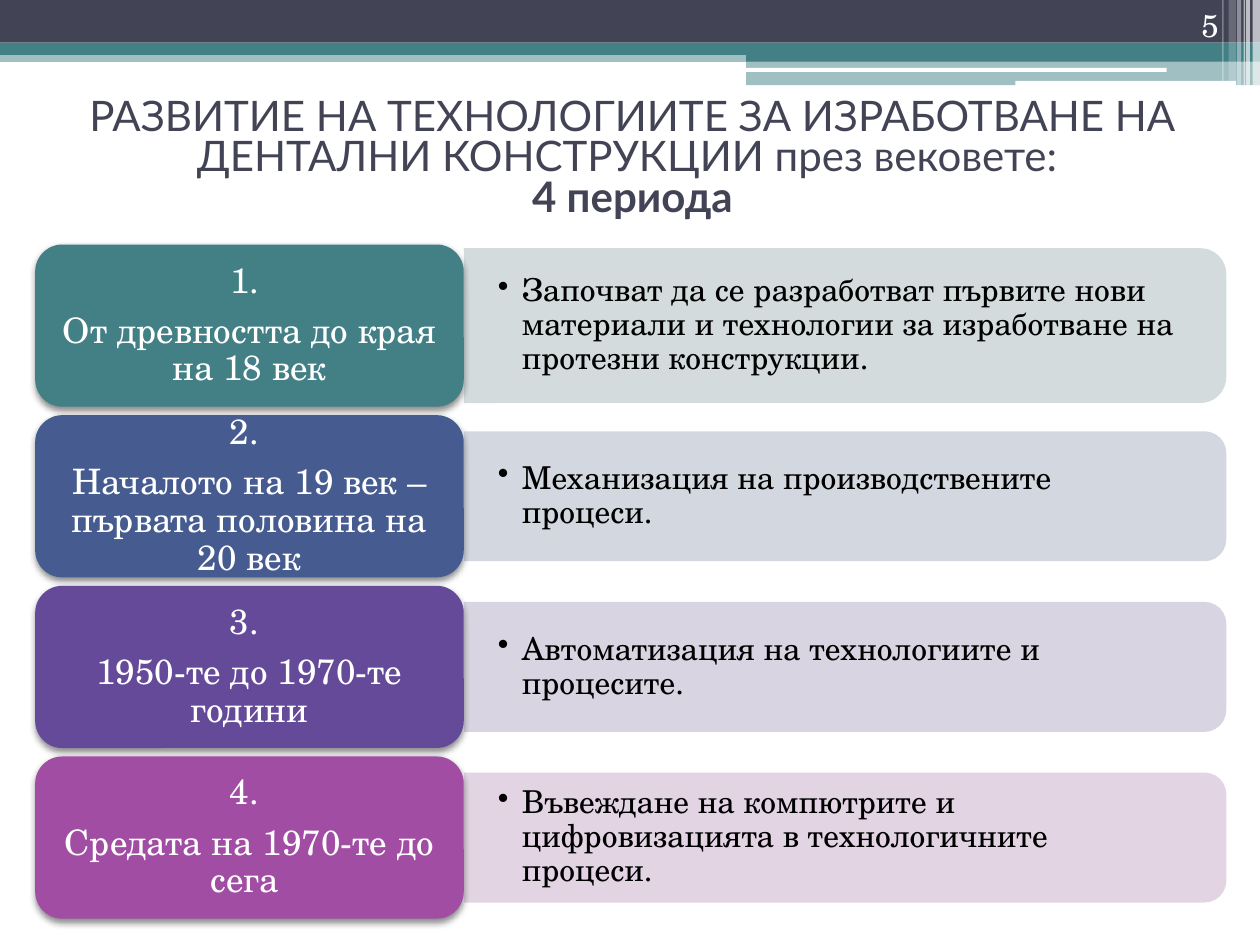
import pptx
import pptx.util
import pptx.dml.color
import pptx.enum.shapes
import pptx.enum.text
from pptx.oxml import parse_xml
from pptx.oxml.ns import nsdecls, qn
from lxml import etree

Cm, Pt = pptx.util.Cm, pptx.util.Pt
Kind = pptx.enum.shapes.MSO_SHAPE
Side = pptx.enum.text.PP_ALIGN
Hold = pptx.enum.text.MSO_ANCHOR

# Content
HEAD = [("РАЗВИТИЕ НА ТЕХНОЛОГИИТЕ ЗА ИЗРАБОТВАНЕ НА ДЕНТАЛНИ КОНСТРУКЦИИ през вековете: ", False),
        ("4 периода", True)]
PAGE = "5"
ERAS = [
    ("1. ", "От древността до края на 18 век",
     "Започват да се разработват първите нови материали и технологии за изработване на протезни конструкции."),
    ("2. ", "Началото на 19 век – първата половина на 20 век",
     "Механизация на производствените процеси."),
    ("3. ", "1950-те до 1970-те години",
     "Автоматизация на технологиите и процесите."),
    ("4. ", "Средата на 1970-те до сега ",
     "Въвеждане на компютрите и цифровизацията в технологичните процеси."),
]
TALL = [3.12, 2.62, 2.62, 2.62]  # panel heights, cm

HUES = {"dark": "424456", "teal": "438086", "white": "FFFFFF", "black": "000000",
        "era0": "438086", "era1": "465B90", "era2": "654A99", "era3": "A04DA3",
        "pale0": "CFD8D9", "pale1": "CFD3DC", "pale2": "D4D0DE", "pale3": "DFD0E0"}
SANS, SERIF = "Lato", "TeX Gyre Schola"

# Header bands: left, top, width, height (cm), colour, opacity %
BANDS = [
    (0, 1.02, 25.4, 0.23, "teal", 50),
    (0, 0, 25.4, 0.86, "dark", 100),
    (0, 0.86, 25.4, 0.25, "teal", 100),
    (15.04, 0.99, 10.36, 0.25, "teal", 100),
    (15.04, 1.22, 10.36, 0.5, "teal", 50),
]
PILLS = [(15.01, 1.37, 8.51, 0.08, "white", 100),
         (20.47, 1.63, 4.45, 0.1, "white", 100)]
# Thin stripes on the right: left, width, height (cm), opacity %
LINES = [(25.25, 0.15, 1.73, 65), (25.12, 0.08, 1.73, 65), (25.07, 0.03, 1.73, 60),
         (24.94, 0.08, 1.73, 40), (24.77, 0.15, 1.63, 20), (24.64, 0.03, 1.63, 30)]

deck = pptx.Presentation()
deck.slide_width, deck.slide_height = Cm(25.4), Cm(19.05)
slide = deck.slides.add_slide(deck.slide_layouts[6])


def tint(name):
    return pptx.dml.color.RGBColor.from_string(HUES[name])


def draw(kind, left, top, wide, high, hue, solid=100):
    part = slide.shapes.add_shape(kind, Cm(left), Cm(top), Cm(wide), Cm(high))
    part.shadow.inherit = False
    part.fill.solid()
    part.fill.fore_color.rgb = tint(hue)
    part.line.fill.background()
    if solid < 100:
        tone = part.fill._xPr.find(qn("a:solidFill"))[0]
        etree.SubElement(tone, qn("a:alpha")).set("val", str(solid * 1000))
    return part


def shade(part):
    props = part._element.spPr
    props.remove(props.find(qn("a:effectLst")))
    props.append(parse_xml(
        f'<a:effectLst {nsdecls("a")}><a:outerShdw blurRad="{Pt(4)}" dist="{Pt(2)}" '
        f'dir="5400000" rotWithShape="0"><a:srgbClr val="{HUES["black"]}">'
        '<a:alpha val="45000"/></a:srgbClr></a:outerShdw></a:effectLst>'))


def box(left, top, wide, high):
    return slide.shapes.add_textbox(Cm(left), Cm(top), Cm(wide), Cm(high))


def apply(item, form):
    for key, val in form.items():
        setattr(item, key, val)


def setup(part, hold, pad=(0.25, 0.13)):
    frame = part.text_frame
    apply(frame, {"word_wrap": True, "vertical_anchor": hold,
                  "margin_left": Cm(pad[0]), "margin_right": Cm(pad[0]),
                  "margin_top": Cm(pad[1]), "margin_bottom": Cm(pad[1])})
    return frame


def write(para, text, face, size, hue, bold=False):
    run = para.add_run()
    run.text = text
    apply(run.font, {"name": face, "size": Pt(size), "bold": bold})
    run.font.color.rgb = tint(hue)


# Header
for band in BANDS:
    draw(Kind.RECTANGLE, *band)
for pill in PILLS:
    draw(Kind.ROUNDED_RECTANGLE, *pill)
for left, wide, high, solid in LINES:
    draw(Kind.RECTANGLE, left, 0, wide, high, "white", solid)

# Title and page number
para = setup(box(0.28, 1.52, 24.64, 3.4), Hold.MIDDLE).paragraphs[0]
apply(para, {"alignment": Side.CENTER, "line_spacing": 0.8})
para._p.get_or_add_pPr().set("marL", str(Cm(0.3)))
for spot, (text, bold) in enumerate(HEAD):
    if spot:
        para.add_line_break()
    write(para, text, SANS, 24, "dark", bold)

para = setup(box(22.71, 0, 2.11, 1.02), Hold.BOTTOM).paragraphs[0]
para.alignment = Side.RIGHT
write(para, PAGE, SERIF, 18, "white")

# Periods: a pale panel with its bullet, and a label at its left
LEFT, TOP, WIDE, HIGH, STEP = 0.71, 4.93, 8.64, 3.27, 3.44
EDGE, SPAN = LEFT + WIDE, 15.37
for row, ((mark, name, note), tall) in enumerate(zip(ERAS, TALL)):
    top = TOP + row * STEP
    mid = top + HIGH / 2
    # The panel is turned a quarter, so its sides swap about its centre
    panel = draw(Kind.ROUND_2_SAME_RECTANGLE, EDGE + (SPAN - tall) / 2, mid - SPAN / 2,
                 tall, SPAN, f"pale{row}", 90)
    panel.rotation = 90

    high = tall - 0.28
    para = setup(box(EDGE, mid - high / 2, 15.22, high), Hold.MIDDLE, (0.69, 0.36)).paragraphs[0]
    apply(para, {"line_spacing": 0.9, "space_after": Pt(2.7)})
    props = para._p.get_or_add_pPr()
    props.set("marL", str(Cm(0.48)))
    props.set("indent", str(Cm(-0.48)))
    etree.SubElement(props, qn("a:buChar")).set("char", "•")
    write(para, note, SERIF, 18, "black")

    label = draw(Kind.ROUNDED_RECTANGLE, LEFT, top, WIDE, HIGH, f"era{row}")
    shade(label)
    frame = setup(label, Hold.MIDDLE, (0.2, 0.1))
    for para, text in ((frame.paragraphs[0], mark), (frame.add_paragraph(), name)):
        apply(para, {"alignment": Side.CENTER, "line_spacing": 0.9, "space_after": Pt(7)})
        write(para, text, SERIF, 20, "white")

deck.save("out.pptx")
